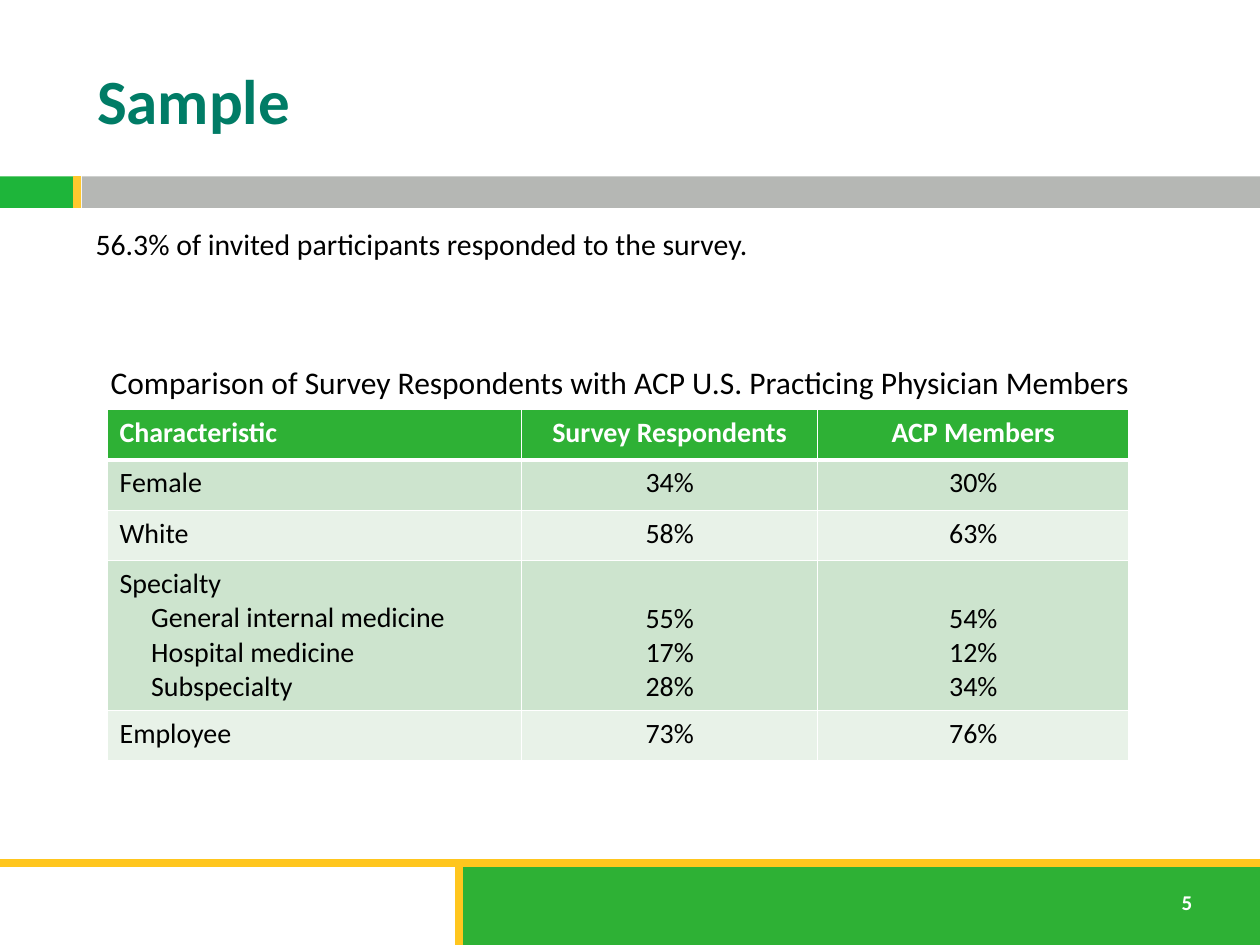
from lxml.etree import SubElement
from pptx import Presentation
from pptx.dml.color import RGBColor
from pptx.enum.shapes import MSO_CONNECTOR as Link, MSO_SHAPE as Shape
from pptx.enum.text import MSO_ANCHOR as Anchor, PP_ALIGN as Align
from pptx.oxml.ns import qn
from pptx.util import Inches, Pt

WHITE = RGBColor(0xFF, 0xFF, 0xFF)
BLACK = RGBColor(0x00, 0x00, 0x00)
TEAL = RGBColor(0x00, 0x7C, 0x66)
LIME = RGBColor(0x1E, 0xB5, 0x3A)
GREEN = RGBColor(0x2E, 0xB1, 0x35)
GREY = RGBColor(0xB5, 0xB7, 0xB4)
GOLD = RGBColor(0xFF, 0xC6, 0x1E)
AMBER = RGBColor(0xFF, 0xC8, 0x2E)
BANDS = (RGBColor(0xCD, 0xE4, 0xCE), RGBColor(0xE8, 0xF2, 0xE8))

HEAD = ("Characteristic", "Survey Respondents", "ACP Members")
ROWS = (
    ("Female", "34%", "30%"),
    ("White", "58%", "63%"),
    ("Specialty\nGeneral internal medicine\nHospital medicine\nSubspecialty",
     "55%\n17%\n28%", "54%\n12%\n34%"),
    ("Employee", "73%", "76%"),
)


def style(para, size, color, bold=False):
    form = {"name": "Calibri", "size": Pt(size), "bold": bold}
    for key, value in form.items():
        setattr(para.font, key, value)
    para.font.color.rgb = color


def add_bar(slide, box, color):
    bar = slide.shapes.add_shape(Shape.RECTANGLE, *map(Inches, box))
    bar.shadow.inherit = False
    bar.fill.solid()
    bar.fill.fore_color.rgb = color
    bar.line.fill.background()


def add_rule(slide, ends, color):
    rule = slide.shapes.add_connector(Link.STRAIGHT, *map(Inches, ends))
    rule.line.color.rgb = color
    rule.line.width = Pt(4.5)
    SubElement(rule._element.spPr, qn("a:effectLst"))


def add_text(slide, box, text, size, color, bold=False, wrap=True):
    frame = slide.shapes.add_textbox(*map(Inches, box)).text_frame
    frame.word_wrap = wrap
    frame.text = text
    style(frame.paragraphs[0], size, color, bold)


def add_band(slide, box):
    """Place the green and grey band under the title."""
    left, top, width, height = box
    add_bar(slide, (left, top, 0.58, height), LIME)
    add_bar(slide, (left + 0.65, top, width - 0.65, height), GREY)
    add_rule(slide, (left + 0.61, top, left + 0.61, top + height), AMBER)


def add_footer(slide, box):
    left, top, width, height = box
    split = left + 3.64
    add_bar(slide, (split, top, left + width - split, height), GREEN)
    add_rule(slide, (left, top, left + width, top), GOLD)
    add_rule(slide, (split, top, split, top + height), GOLD)
    add_text(slide, (9.28, top + 0.16, 0.4, 0.3), "5", 12, WHITE,
             bold=True, wrap=False)


def set_title(slide, box, text):
    title = slide.shapes.title
    title.left, title.top, title.width, title.height = map(Inches, box)
    frame = title.text_frame
    frame.text = text
    frame.vertical_anchor = Anchor.MIDDLE
    frame.paragraphs[0].alignment = Align.LEFT
    style(frame.paragraphs[0], 36, TEAL, True)


def add_edges(cell, row):
    """Draw white cell borders, thick below the header."""
    props = cell._tc.get_or_add_tcPr()
    for side in "LRTB":
        thick = (row, side) in ((0, "B"), (1, "T"))
        edge = SubElement(props, qn(f"a:ln{side}"), w=str(Pt(3 if thick else 1)))
        fill = SubElement(edge, qn("a:solidFill"))
        SubElement(fill, qn("a:srgbClr"), val=str(WHITE))


def fill_cell(cell, text, row, col):
    add_edges(cell, row)
    cell.fill.solid()
    cell.fill.fore_color.rgb = BANDS[(row - 1) % 2] if row else GREEN
    cell.text = text
    paras = cell.text_frame.paragraphs
    if len(paras) > 1 and col:
        cell.vertical_anchor = Anchor.BOTTOM
    for pos, para in enumerate(paras):
        para.alignment = Align.CENTER if col else Align.LEFT
        if pos and not col:
            para._p.get_or_add_pPr().set("marL", str(Inches(0.25)))
        style(para, 16, BLACK if row else WHITE, not row)


def add_grid(slide, box):
    data = (HEAD, *ROWS)
    grid = slide.shapes.add_table(len(data), len(HEAD), *map(Inches, box)).table
    for col, width in zip(grid.columns, (3.29, 2.35, 2.47)):
        col.width = Inches(width)
    for row, texts in enumerate(data):
        grid.rows[row].height = Inches(1.19 if "\n" in texts[0] else 0.4)
        for col, text in enumerate(texts):
            fill_cell(grid.cell(row, col), text, row, col)


def main():
    deck = Presentation()
    deck.slide_width, deck.slide_height = Inches(10), Inches(7.5)
    slide = deck.slides.add_slide(deck.slide_layouts[5])
    add_band(slide, (0, 1.4, 10, 0.25))
    add_footer(slide, (0, 6.85, 10, 0.65))
    set_title(slide, (0.67, 0.25, 8.92, 1.08), "Sample")
    add_text(slide, (0.66, 1.74, 8.92, 0.5),
             "56.3% of invited participants responded to the survey.", 17, BLACK)
    add_grid(slide, (0.85, 3.25, 8.11, 2.79))
    add_text(slide, (0.78, 2.83, 8.5, 0.4),
             "Comparison of Survey Respondents with ACP U.S. Practicing "
             "Physician Members", 18, BLACK)
    deck.save("out.pptx")


if __name__ == "__main__":
    main()
